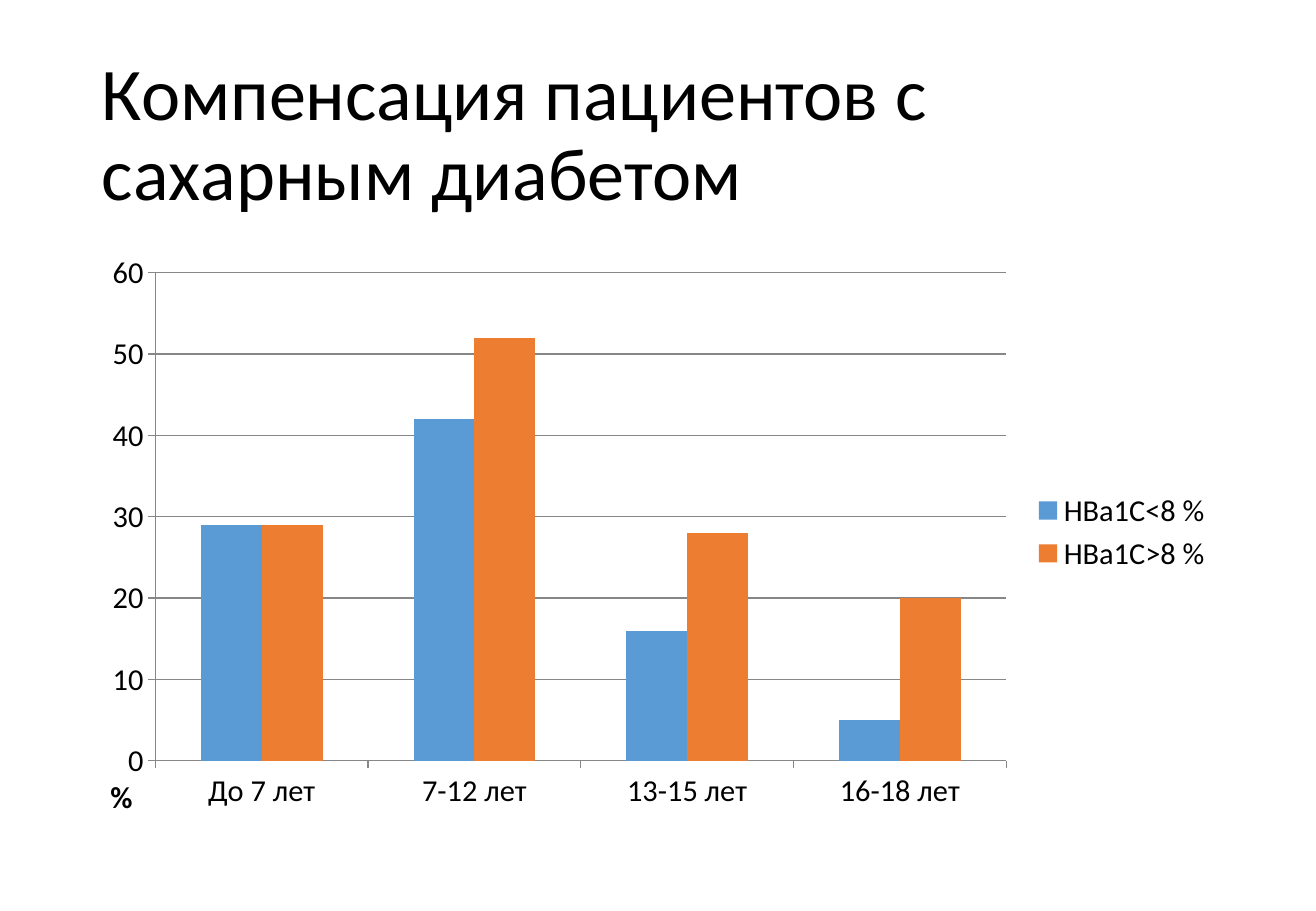
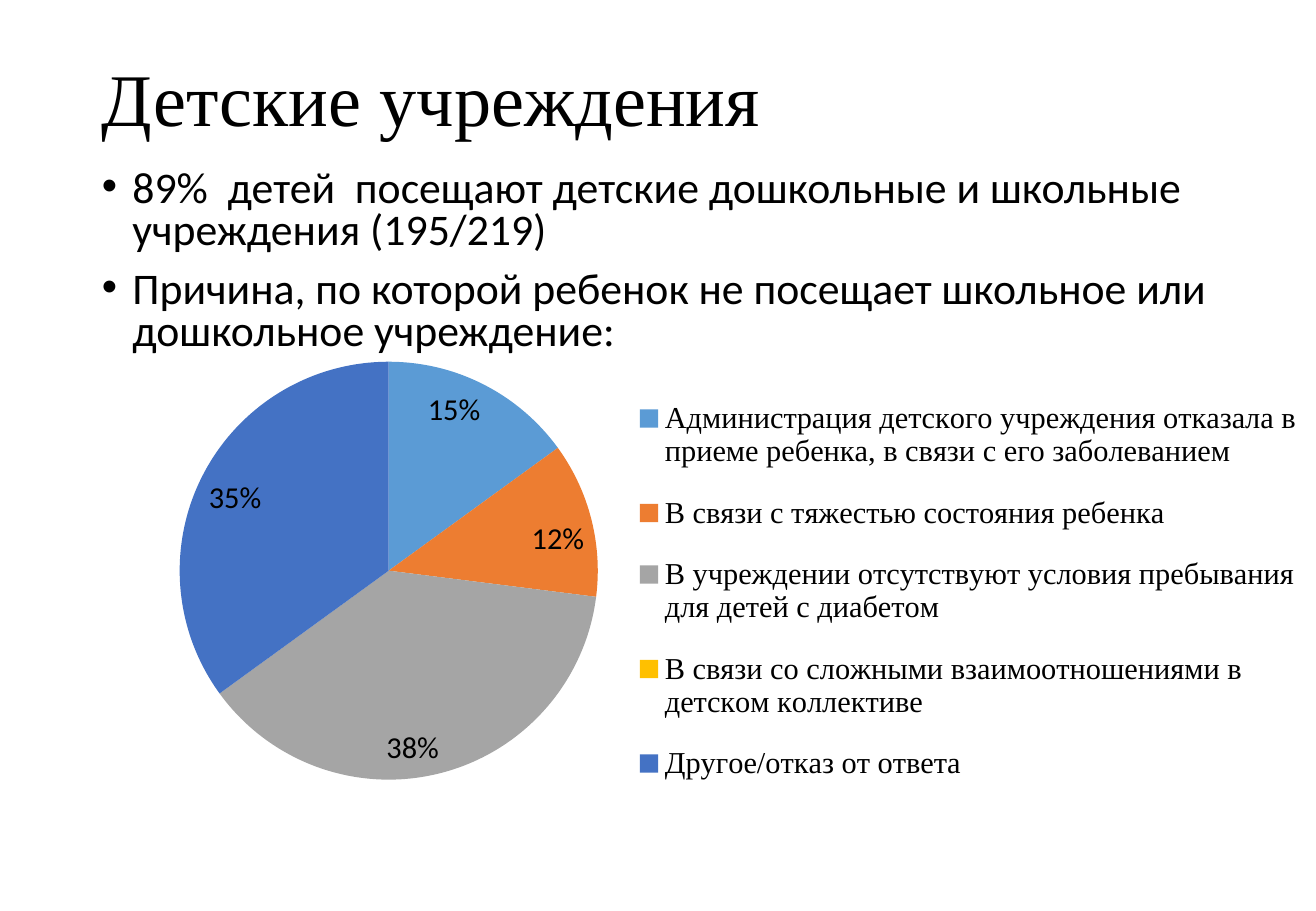
from pptx import Presentation
from pptx.chart.data import CategoryChartData
from pptx.dml.color import RGBColor
from pptx.enum.chart import XL_CHART_TYPE, XL_LABEL_POSITION, XL_LEGEND_POSITION, XL_TICK_MARK
from pptx.enum.text import MSO_ANCHOR
from pptx.oxml import parse_xml
from pptx.oxml.ns import nsdecls, qn
from pptx.util import Cm, Pt

COLORS = {
    "text": "000000", "line": "878787", "blue": "5B9BD5", "orange": "ED7D31",
    "gray": "A5A5A5", "yellow": "FFC000", "indigo": "4472C4",
}
COLOR = {name: RGBColor.from_string(value) for name, value in COLORS.items()}
BODY_FONT, SERIF_FONT = "Calibri", "Times New Roman"
LEFT, WIDTH, TITLE_TOP = 1.88, 23.72, 1.02
TITLE = {"size": Pt(44)}
TITLE_PARAGRAPH = {"line_spacing": 0.9}


def add_text(slide, box, lines, font, paragraph_format=None, anchor=MSO_ANCHOR.TOP, wrap=True):
    shape = slide.shapes.add_textbox(*[Cm(length) for length in box])
    frame = shape.text_frame
    frame.word_wrap = wrap
    frame.vertical_anchor = anchor
    frame.text = "\n".join(lines)
    for paragraph in frame.paragraphs:
        for name, value in (paragraph_format or {}).items():
            setattr(paragraph, name, value)
        for name, value in {"name": BODY_FONT, **font}.items():
            setattr(paragraph.runs[0].font, name, value)
        paragraph.runs[0].font.color.rgb = COLOR["text"]
    return shape


def add_chart(slide, kind, box, categories, series, legend_font):
    data = CategoryChartData()
    data.categories = categories
    for name, values in series:
        data.add_series(name, values)
    chart = slide.shapes.add_chart(kind, *[Cm(length) for length in box], data).chart
    chart.has_title = False
    chart.has_legend = True
    chart.legend.position = XL_LEGEND_POSITION.RIGHT
    chart.legend.include_in_layout = False
    for font, name in ((chart.font, BODY_FONT), (chart.legend.font, legend_font)):
        font.name, font.size = name, Pt(18)
        font.color.rgb = COLOR["text"]
    return chart


presentation = Presentation()
presentation.slide_width, presentation.slide_height = Cm(27.51), Cm(19.05)
blank = presentation.slide_layouts[6]

# Slide 1: compensation by age group
slide = presentation.slides.add_slide(blank)
add_text(slide, (LEFT, TITLE_TOP, WIDTH, 3.68), ["Компенсация пациентов с сахарным диабетом"],
         TITLE, TITLE_PARAGRAPH, MSO_ANCHOR.MIDDLE)

chart = add_chart(
    slide, XL_CHART_TYPE.COLUMN_CLUSTERED, (LEFT, 5.08, WIDTH, 12.09),
    ["До 7 лет", "7-12 лет", "13-15 лет", "16-18 лет"],
    [("НВа1С<8 %", (29, 42, 16, 5)), ("НВа1С>8 %", (29, 52, 28, 20))], BODY_FONT)
plot = chart.plots[0]
plot.gap_width, plot.overlap, plot.vary_by_categories = 150, 0, False
for series, color in zip(plot.series, ("blue", "orange")):
    series.format.fill.solid()
    series.format.fill.fore_color.rgb = COLOR[color]

# Axes and gridlines
value_axis = chart.value_axis
value_axis.minimum_scale, value_axis.maximum_scale, value_axis.major_unit = 0, 60, 10
for axis in (chart.category_axis, value_axis):
    axis.major_tick_mark = XL_TICK_MARK.OUTSIDE
for part in (chart.category_axis, value_axis, value_axis.major_gridlines):
    part.format.line.color.rgb = COLOR["line"]
    part.format.line.width = Pt(0.75)

add_text(slide, (2.06, 16.15, 0.94, 1.02), ["%"], {"size": Pt(18), "bold": True}, wrap=False)

# Slide 2: attendance and reasons for absence
slide = presentation.slides.add_slide(blank)
add_text(slide, (LEFT, TITLE_TOP, WIDTH, 2.26), ["Детские учреждения"],
         {**TITLE, "name": SERIF_FONT}, TITLE_PARAGRAPH, MSO_ANCHOR.MIDDLE)

reasons = [
    "Администрация детского учреждения отказала в приеме ребенка, в связи с его заболеванием",
    "В связи с тяжестью состояния ребенка",
    "В учреждении отсутствуют условия пребывания для детей с диабетом",
    "В связи со сложными взаимоотношениями в детском коллективе",
    "Другое/отказ от ответа",
]
shares = (15, 12, 38, 0, 35)
chart = add_chart(slide, XL_CHART_TYPE.PIE, (3.28, 5.38, 24.23, 12.14), reasons,
                  [("Series 1", shares)], SERIF_FONT)
plot = chart.plots[0]
plot.vary_by_categories = True
pie = plot.series[0]
for index, color in enumerate(("blue", "orange", "gray", "yellow", "indigo")):
    fill = pie.points[index].format.fill
    fill.solid()
    fill.fore_color.rgb = COLOR[color]

# Percent labels, none on the empty slice
labels = pie.data_labels
for name, value in {"show_value": False, "show_percentage": True, "number_format": "0%",
                    "number_format_is_linked": False,
                    "position": XL_LABEL_POSITION.INSIDE_END}.items():
    setattr(labels, name, value)
chart.element.find(".//" + qn("c:dLbls")).insert(0, parse_xml(
    f'<c:dLbl {nsdecls("c")}><c:idx val="{shares.index(0)}"/><c:delete val="1"/></c:dLbl>'))

# Places of pie and legend, as fractions of the chart
for tag, position, target, fractions in (
    ("c:plotArea", 0, '<c:layoutTarget val="inner"/>', (0, 0.18, 0.4, 0.72)),
    ("c:legend", 1, "", (0.41, 0.2, 0.58, 0.75)),
):
    parent = chart.element.find(".//" + qn(tag))
    for old in parent.findall(qn("c:layout")):
        parent.remove(old)
    lengths = "".join(f'<c:{name} val="{value}"/>' for name, value in zip("xywh", fractions))
    parent.insert(position, parse_xml(
        f'<c:layout {nsdecls("c")}><c:manualLayout>{target}<c:xMode val="edge"/>'
        f'<c:yMode val="edge"/>{lengths}</c:manualLayout></c:layout>'))

# Bulleted findings
findings = add_text(
    slide, (LEFT, 3.43, WIDTH, 4.37),
    ["89%  детей  посещают детские дошкольные и школьные учреждения (195/219)",
     "Причина, по которой ребенок не посещает школьное или дошкольное учреждение:"],
    {"size": Pt(25.9)}, {"line_spacing": 0.8, "space_before": Pt(10)})
for paragraph in findings.text_frame.paragraphs:
    properties = paragraph._p.get_or_add_pPr()
    properties.set("marL", str(Cm(0.64)))
    properties.set("indent", str(-Cm(0.64)))
    for bullet in ('buFont {} typeface="Arial"', 'buChar {} char="•"'):
        properties.append(parse_xml(f'<a:{bullet.format(nsdecls("a"))}/>'))

presentation.save("out.pptx")
